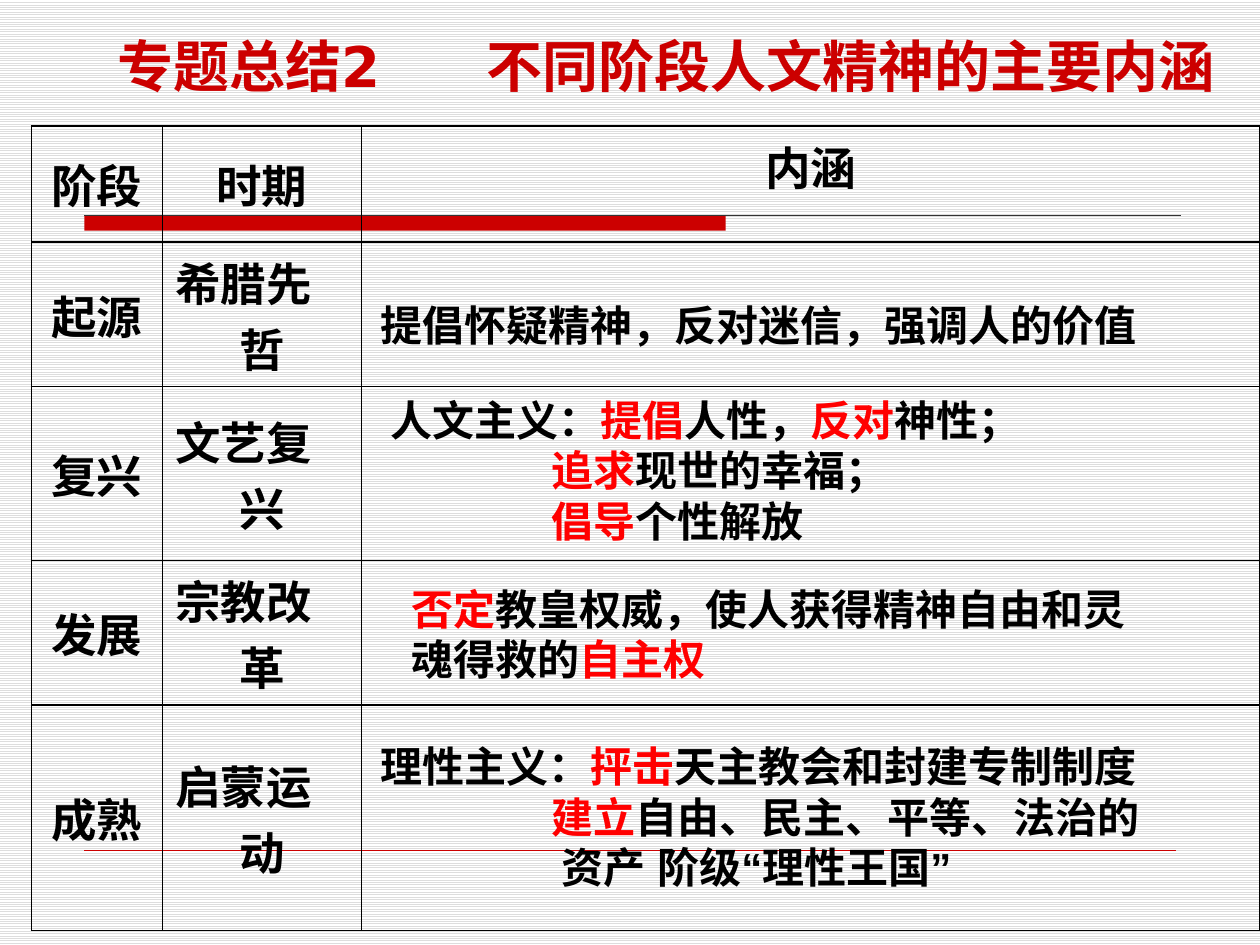
from lxml.etree import SubElement
from pptx import Presentation
from pptx.dml.color import RGBColor
from pptx.enum.dml import MSO_PATTERN as Pattern
from pptx.enum.shapes import MSO_CONNECTOR as Link, MSO_SHAPE as Shape
from pptx.enum.text import MSO_ANCHOR as Anchor, MSO_AUTO_SIZE as Fit, PP_ALIGN as Align
from pptx.oxml.ns import qn
from pptx.util import Inches, Pt

BLACK = RGBColor(0, 0, 0)
WHITE = RGBColor(255, 255, 255)
GREY = RGBColor(0xDD, 0xDD, 0xDD)
DARK = RGBColor(0x33, 0x33, 0x33)
CRIMSON = RGBColor(0xCC, 0, 0)
RED = RGBColor(0xFF, 0, 0)

STAGES = [
    ("阶段", "时期", "内涵"),
    ("起源", "希腊先哲", ""),
    ("复兴", "文艺复兴", ""),
    ("发展", "宗教改革", ""),
    ("成熟", "启蒙运动", ""),
]
COLS = [1.04, 1.58, 7.13]
ROWS = [0.92, 1.11, 1.38, 1.11, 1.79]

NOTES = [
    ((2.92, 2.33, 6.42, 0.5), [(0, [("提倡怀疑精神，反对迷信，强调人的价值", BLACK)])]),
    ((3, 3.08, 6.33, 1.3), [
        (0, [("人文主义：", BLACK), ("提倡", RED), ("人性，", BLACK),
             ("反对", RED), ("神性；", BLACK)]),
        (1.28, [("追求", RED), ("现世的幸福；", BLACK)]),
        (1.28, [("倡导", RED), ("个性解放", BLACK)]),
    ]),
    ((3.17, 4.58, 5.92, 0.9), [
        (0, [("否定", RED), ("教皇权威，使人获得精神自由和灵魂得救的", BLACK),
             ("自主权", RED)]),
    ]),
    ((2.92, 5.83, 7.08, 1.3), [
        (0, [("理性主义：", BLACK), ("抨击", RED), ("天主教会和封建专制制度", BLACK)]),
        (1.36, [("建立", RED), ("自由、民主、平等、法治的", BLACK)]),
        (1.44, [("资产 阶级“理性王国”", BLACK)]),
    ]),
]


class Board:
    """Holds the style and the slide, and draws each kind of element."""

    def __init__(self, deck):
        self.slide = deck.slides.add_slide(deck.slide_layouts[5])
        self.shapes = self.slide.shapes
        self.head, self.body, self.grid = "DejaVu Sans", "Arial", "Noto Sans CJK SC"
        fill = self.slide.background.fill
        fill.patterned()
        fill.pattern = Pattern.LIGHT_HORIZONTAL
        fill.fore_color.rgb, fill.back_color.rgb = GREY, WHITE

    def run(self, para, text, size, face, color=BLACK):
        run = para.add_run()
        run.text = text
        font = run.font
        font.size, font.bold, font.name = Pt(size), True, face
        font.color.rgb = color
        SubElement(run._r.get_or_add_rPr(), qn("a:ea"), typeface=face)

    def title(self, text, box, stop):
        shape = self.shapes.title
        shape.left, shape.top, shape.width, shape.height = map(Inches, box)
        frame = shape.text_frame
        frame.auto_size, frame.vertical_anchor = Fit.NONE, Anchor.BOTTOM
        para = frame.paragraphs[0]
        para.alignment = Align.LEFT
        tabs = SubElement(para._p.get_or_add_pPr(), qn("a:tabLst"))
        SubElement(tabs, qn("a:tab"), pos=str(Inches(stop)), algn="l")
        self.run(para, text, 32, self.head, CRIMSON)

    def bar(self, box, color):
        shape = self.shapes.add_shape(Shape.RECTANGLE, *map(Inches, box))
        shape.shadow.inherit = False
        shape.fill.solid()
        shape.fill.fore_color.rgb = color
        shape.line.fill.background()

    def rule(self, left, right, top, color, width):
        ends = map(Inches, (left, top, right, top))
        line = self.shapes.add_connector(Link.STRAIGHT, *ends)
        line.line.color.rgb, line.line.width = color, Pt(width)
        SubElement(line._element.spPr, qn("a:effectLst"))

    def border(self, cell):
        props = cell._tc.get_or_add_tcPr()
        for i, side in enumerate(("lnL", "lnR", "lnT", "lnB")):
            edge = props.makeelement(qn("a:" + side), {"w": str(Pt(1))})
            props.insert(i, edge)
            fill = SubElement(edge, qn("a:solidFill"))
            SubElement(fill, qn("a:srgbClr"), val=str(BLACK))

    def table(self, data, left, top, cols, rows):
        box = map(Inches, (left, top, sum(cols), sum(rows)))
        table = self.shapes.add_table(len(rows), len(cols), *box).table
        table.first_row = table.horz_banding = False
        for col, width in zip(table.columns, cols):
            col.width = Inches(width)
        for row, high in zip(table.rows, rows):
            row.height = Inches(high)
        for r, line in enumerate(data):
            for c, text in enumerate(line):
                cell = table.cell(r, c)
                cell.fill.background()
                self.border(cell)
                if not text:
                    continue
                cell.vertical_anchor = Anchor.TOP if c == 2 else Anchor.MIDDLE
                para = cell.text_frame.paragraphs[0]
                para.alignment = Align.LEFT if r and c else Align.CENTER
                self.indent(para, 0.51, -0.51)
                self.run(para, text, 26, self.grid)

    def indent(self, para, left, first=0):
        props = para._p.get_or_add_pPr()
        props.set("marL", str(Inches(left)))
        props.set("indent", str(Inches(first)))

    def note(self, box, lines):
        frame = self.shapes.add_textbox(*map(Inches, box)).text_frame
        frame.word_wrap = True
        for i, (left, parts) in enumerate(lines):
            para = frame.add_paragraph() if i else frame.paragraphs[0]
            para.line_spacing = Pt(28.8)
            self.indent(para, left)
            for text, color in parts:
                self.run(para, text, 24, self.body, color)


def main():
    deck = Presentation()
    deck.slide_width, deck.slide_height = Inches(10), Inches(7.5)
    board = Board(deck)
    board.bar((0.67, 1.71, 5.09, 0.12), CRIMSON)
    board.rule(0.67, 9.37, 1.71, DARK, 0.75)
    board.rule(0.67, 9.33, 6.75, CRIMSON, 0.25)
    board.title("专题总结2\t不同阶段人文精神的主要内涵", (0.83, -0.42, 9, 1.25), 2.93)
    board.table(STAGES, 0.25, 1, COLS, ROWS)
    for box, lines in NOTES:
        board.note(box, lines)
    deck.save("out.pptx")


if __name__ == "__main__":
    main()
